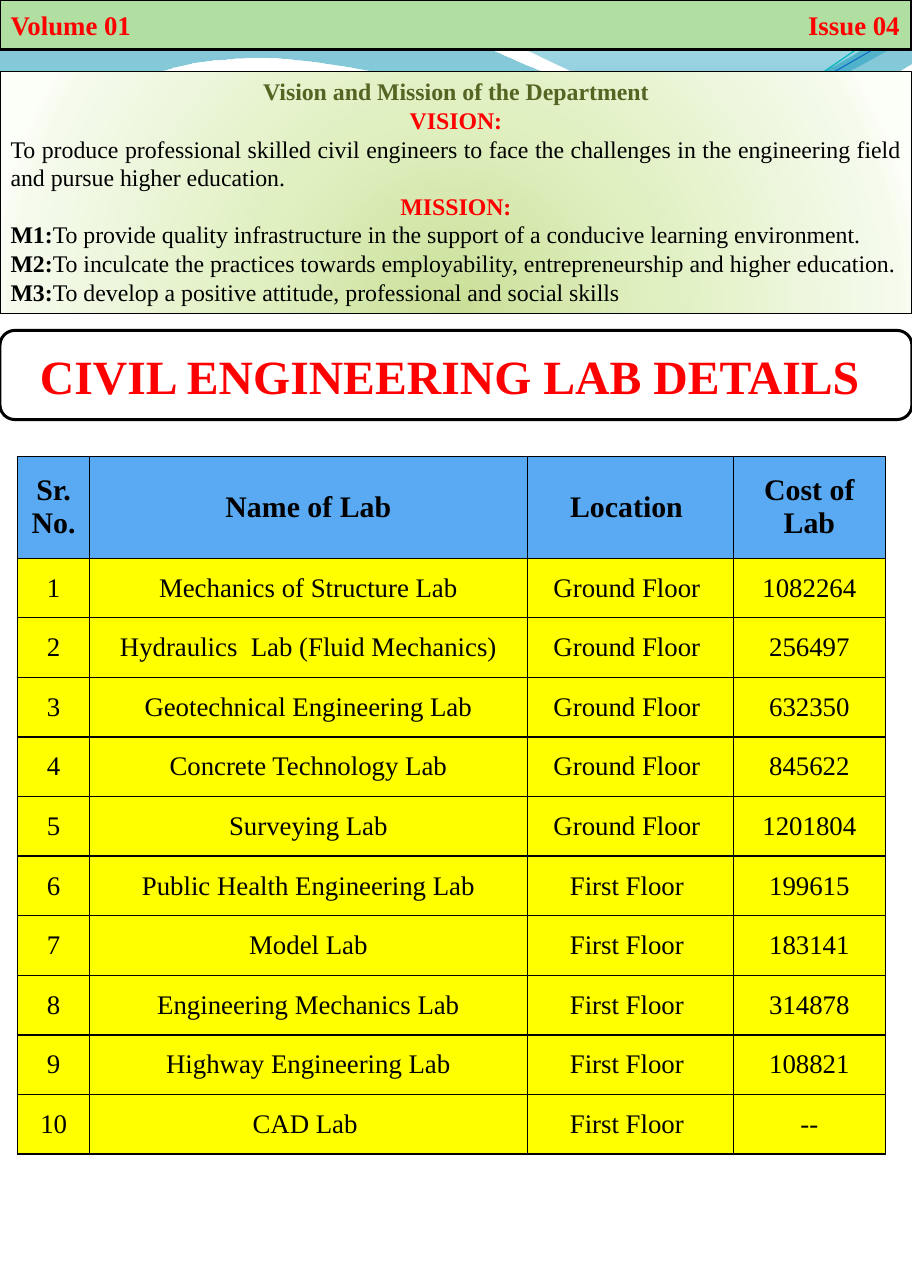
"""Builds the civil engineering lab details page of a department newsletter."""
from pptx import Presentation
from pptx.dml.color import RGBColor
from pptx.enum import shapes as sh, text as tx
from pptx.oxml import parse_xml
from pptx.oxml.ns import nsdecls, qn
from pptx.util import Cm, Pt

NS = nsdecls("a")
FACE = "Times New Roman"
hue = RGBColor.from_string

deck = Presentation()
deck.slide_width, deck.slide_height = Cm(21.59), Cm(30.48)
page = deck.slides.add_slide(deck.slide_layouts[6])


def wave(frame, legs, close):
    """Draw a path in inches within a frame; six-number legs are Bezier curves."""
    left, top, right, low = [Cm(n * 2.54) for n in frame]
    pen = page.shapes.build_freeform(left, top, 1.0)
    pen.add_line_segments([(right, top), (right, low), (left, low)], close=close)
    form = pen.convert_to_shape()
    form.shadow.inherit = False
    track = next(form._element.spPr.iter(qn("a:path")))
    for part in list(track):
        track.remove(part)
    for n, leg in enumerate(legs):
        kind = "cubicBezTo" if len(leg) == 6 else "lnTo" if n else "moveTo"
        dots = "".join(f'<a:pt x="{Cm(x * 2.54) - left}" y="{Cm(y * 2.54) - top}"/>'
                       for x, y in zip(leg[::2], leg[1::2]))
        track.append(parse_xml(f"<a:{kind} {NS}>{dots}</a:{kind}>"))
    if close:
        track.append(parse_xml(f"<a:close {NS}/>"))
    return form


def blend(form, stops, way):
    """Fill a shape with gradient stops of place, colour and opacity in percent."""
    marks = "".join(
        f'<a:gs pos="{at * 1000}"><a:srgbClr val="{tint}"><a:alpha val="{dense * 1000}"/>'
        "</a:srgbClr></a:gs>" for at, tint, dense in stops)
    form.fill.gradient()
    props = form._element.spPr
    props.replace(props.find(qn("a:gradFill")), parse_xml(
        f'<a:gradFill {NS} rotWithShape="1"><a:gsLst>{marks}</a:gsLst>{way}</a:gradFill>'))


bands = [
    ((-0.01, -0.01, 8.51, 1.81),
     [(0, -0.01), (3.74, -0.01), (4.04, 0.27, 5.64, 1.01, 6.45, 1.01),
      (7.25, 1.01, 8.15, 0.41, 8.5, 0.14), (8.51, 0.58),
      (8.36, 0.7, 7.39, 1.21, 6.34, 1.21), (5.29, 1.2, 3.25, 0.45, 2.19, 0.55),
      (1.1, 0.57, 0.39, 1.33, -0.01, 1.81), (0, -0.01)],
     [(0, "0074A1", 45), (100, "00C6CF", 55)]),
    ((4.07, -0.01, 8.5, 1.11),
     [(4.07, -0.01), (4.33, 0.18, 5.8, 0.99, 6.53, 1.05),
      (7.27, 1.1, 8.17, 0.51, 8.5, 0.34), (8.5, 0), (4.07, -0.01)],
     [(0, "00A1A9", 30), (80, "008BBF", 45)]),
]
for frame, legs, stops in bands:
    band = wave(frame, legs, True)
    band.line.fill.background()
    blend(band, stops, '<a:lin ang="5400000" scaled="0"/>')

curves = [
    ((0.01, 0.15, 8.47, 1.6),
     [(0.01, 1.6), (0.41, 1.33, 1.33, 0.79, 2.34, 0.75), (3.35, 0.71, 5.05, 1.45, 6.07, 1.35),
      (7.09, 1.25, 7.97, 0.4, 8.47, 0.15)], "0AB8BF", 0.85),
    ((0.01, 0.28, 8.49, 1.48),
     [(0.01, 1.48), (0.41, 1.37, 1.39, 0.85, 2.4, 0.82), (3.42, 0.79, 5.09, 1.37, 6.1, 1.28),
      (7.12, 1.19, 7.99, 0.49, 8.49, 0.28)], "0F6FC6", 0.75),
]
for frame, legs, tint, wide in curves:
    curve = wave(frame, legs, False)
    curve.fill.background()
    curve.line.color.rgb = hue(tint)
    curve.line.width = Pt(wide)

boxes = []
for kind, top, tall, wide in ((sh.MSO_SHAPE.RECTANGLE, 0, 1.17, 2),
                              (sh.MSO_SHAPE.RECTANGLE, 1.7, 5.72, 0.75),
                              (sh.MSO_SHAPE.ROUNDED_RECTANGLE, 7.82, 2.11, 2)):
    box = page.shapes.add_shape(kind, 0, Cm(top), Cm(21.59), Cm(tall))
    box.shadow.inherit = False
    box.line.color.rgb = hue("000000")
    box.line.width = Pt(wide)
    box.text_frame.word_wrap = True
    box.text_frame.vertical_anchor = tx.MSO_ANCHOR.MIDDLE
    boxes.append(box)
head, goal, title = boxes

for box, back, words, size, align in (
        (head, "B0DFA1", "Volume 01\tIssue 04", 18, tx.PP_ALIGN.LEFT),
        (title, "FFFFFF", "CIVIL ENGINEERING LAB DETAILS ", 32, tx.PP_ALIGN.CENTER)):
    box.fill.solid()
    box.fill.fore_color.rgb = hue(back)
    box.text_frame.text = words
    para = box.text_frame.paragraphs[0]
    para.alignment = align
    para.font.name, para.font.size, para.font.bold = FACE, Pt(size), True
    para.font.color.rgb = hue("FF0000")
head.text_frame.paragraphs[0]._p.get_or_add_pPr().insert(0, parse_xml(
    f'<a:tabLst {NS}><a:tab pos="{Cm(21.05)}" algn="r"/></a:tabLst>'))

blend(goal, [(0, "C9DF97", 100), (43, "E0F0C1", 100), (93, "F5FAEC", 100), (100, "FCFEF8", 100)],
      '<a:path path="circle"><a:fillToRect l="50000" t="130000" r="50000" b="-30000"/></a:path>')
goal.text_frame.vertical_anchor = tx.MSO_ANCHOR.TOP
lines = [
    ("Vision and Mission of the Department", "", "546422"),
    ("VISION:", "", "FF0000"),
    ("", "To produce professional skilled civil engineers to face the challenges in the "
         "engineering field and pursue higher education.", "000000"),
    ("MISSION:", "", "FF0000"),
    ("M1:", "To provide quality infrastructure in the support of a conducive learning "
            "environment.", "000000"),
    ("M2:", "To inculcate the practices towards employability, entrepreneurship and higher "
            "education.", "000000"),
    ("M3:", "To develop a positive attitude, professional and social skills", "000000"),
]
for n, (strong, plain, tint) in enumerate(lines):
    para = goal.text_frame.add_paragraph() if n else goal.text_frame.paragraphs[0]
    para.alignment = tx.PP_ALIGN.JUSTIFY if plain else tx.PP_ALIGN.CENTER
    para.font.name, para.font.size = FACE, Pt(16)
    para.font.color.rgb = hue(tint)
    for words, bold in ((strong, True), (plain, False)):
        if words:
            run = para.add_run()
            run.text, run.font.bold = words, bold

labs = [
    ("Mechanics of Structure Lab", "1082264"),
    ("Hydraulics  Lab (Fluid Mechanics)", "256497"),
    ("Geotechnical Engineering Lab", "632350"),
    ("Concrete Technology Lab", "845622"),
    ("Surveying Lab", "1201804"),
    ("Public Health Engineering Lab", "199615"),
    ("Model Lab", "183141"),
    ("Engineering Mechanics Lab", "314878"),
    ("Highway Engineering Lab", "108821"),
    ("CAD Lab ", "--"),
]
rows = [("Sr. No.", "Name of Lab", "Location ", "Cost of Lab")]
for n, (name, cost) in enumerate(labs, 1):
    rows.append((str(n), name, "Ground Floor " if n <= 5 else "First Floor ", cost))

grid = page.shapes.add_table(len(rows), 4, Cm(0.42), Cm(10.8), Cm(20.54), Cm(16.51)).table
for col, wide in zip(grid.columns, (1.7, 10.36, 4.88, 3.6)):
    col.width = Cm(wide)
for r, row in enumerate(rows):
    grid.rows[r].height = Cm(1.41 if r else 2.41)
    for c, words in enumerate(row):
        cell = grid.cell(r, c)
        cell.text = words
        cell.vertical_anchor = tx.MSO_ANCHOR.MIDDLE
        para = cell.text_frame.paragraphs[0]
        para.alignment = tx.PP_ALIGN.CENTER
        para.font.name, para.font.size, para.font.bold = FACE, Pt(18 if r else 20), r == 0
        para.font.color.rgb = hue("000000")
        for side in ("lnL", "lnR", "lnT", "lnB"):
            cell._tc.get_or_add_tcPr().append(parse_xml(
                f'<a:{side} {NS} w="{Pt(1)}"><a:solidFill><a:srgbClr val="000000"/>'
                f"</a:solidFill></a:{side}>"))
        cell.fill.solid()
        cell.fill.fore_color.rgb = hue("FFFF00" if r else "59AAF2")

deck.save("out.pptx")
